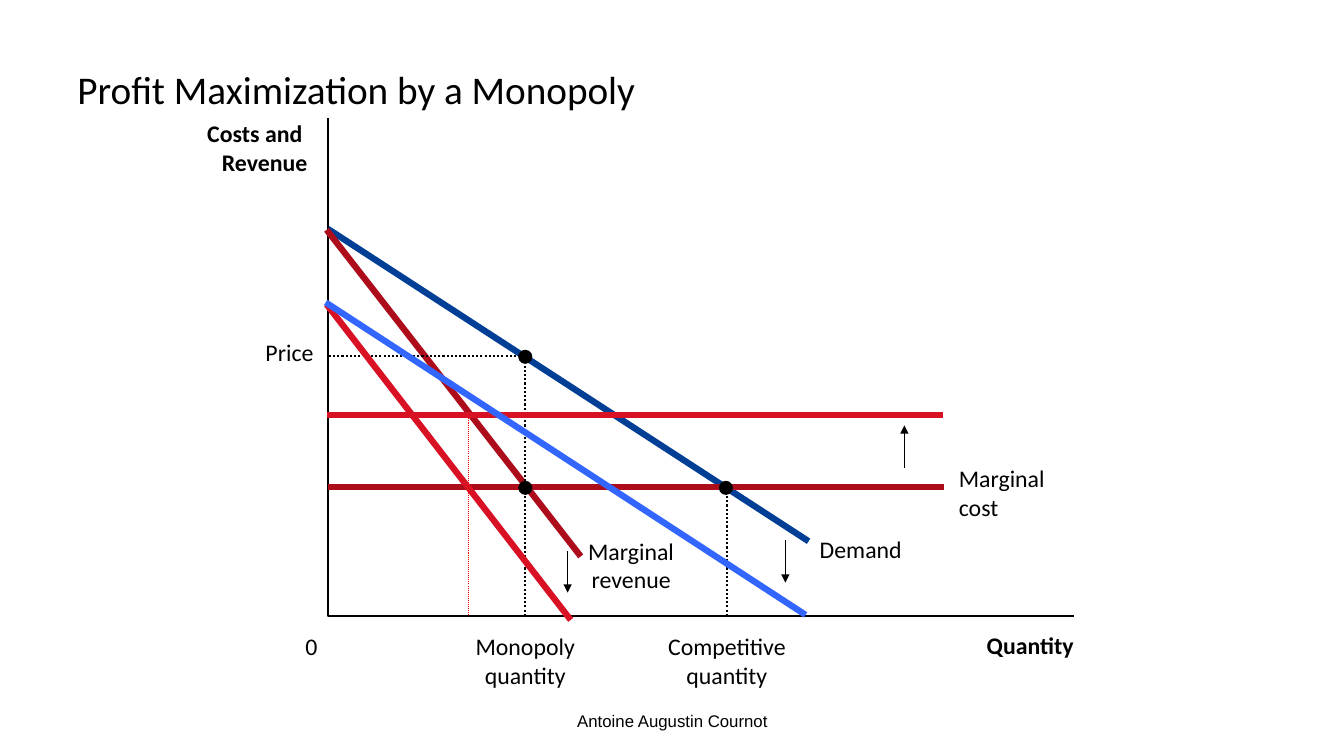
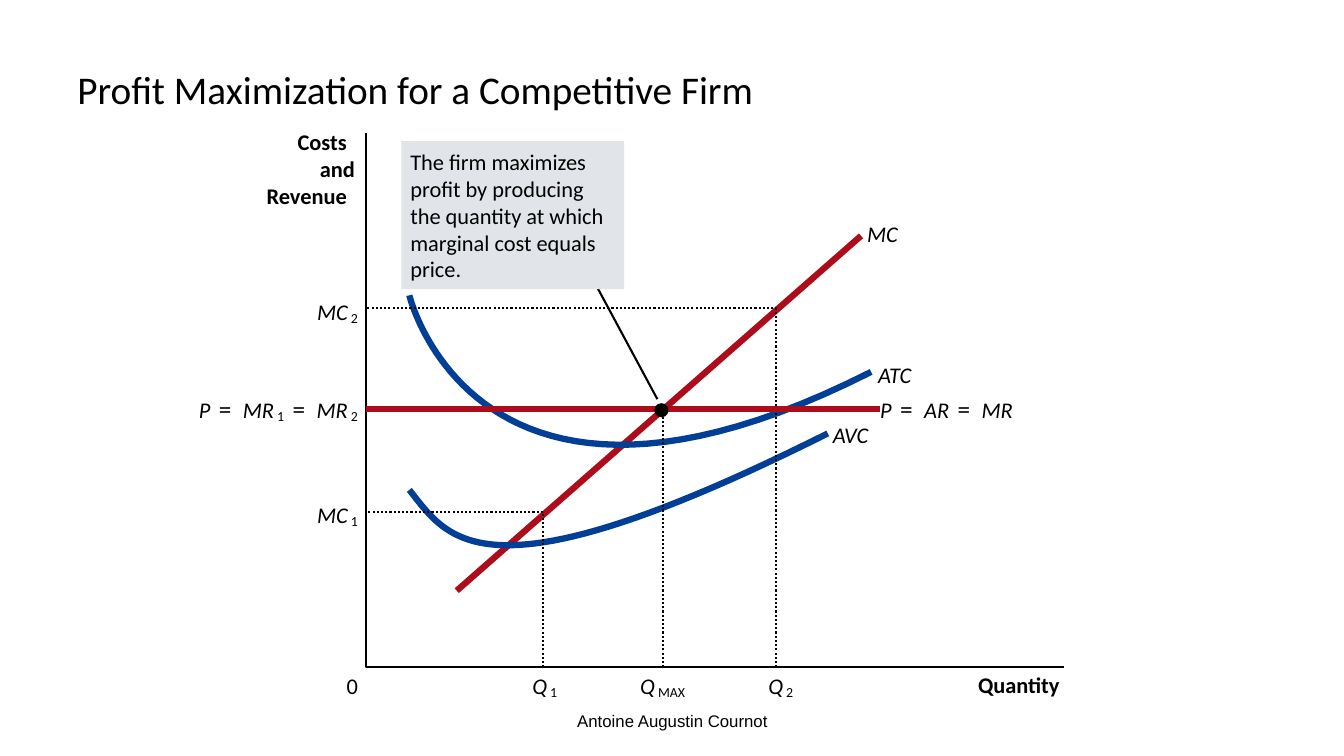
from lxml.etree import SubElement
from pptx import Presentation
from pptx.dml.color import RGBColor
from pptx.enum.dml import MSO_LINE
from pptx.enum.shapes import MSO_CONNECTOR, MSO_SHAPE
from pptx.enum.text import MSO_ANCHOR, PP_ALIGN
from pptx.oxml.ns import qn
from pptx.util import Inches, Pt

COLORS = {
    "ink": "000000",
    "navy": "003F95",
    "blue": "3366FF",
    "wine": "AD0D1B",
    "red": "D91124",
    "thin": "FF0000",
    "note": "E1E5E9",
}
PENS = {
    "axis": ("ink", 1.5, False, False),
    "dots": ("ink", 1.5, True, False),
    "guide": ("thin", 0.75, True, False),
    "arrow": ("ink", 0.75, False, True),
    "navy": ("navy", 4.5, False, False),
    "blue": ("blue", 4.5, False, False),
    "wine": ("wine", 4.5, False, False),
    "red": ("red", 4.5, False, False),
}
ALIGNS = {
    "left": (PP_ALIGN.LEFT, 0),
    "center": (PP_ALIGN.CENTER, 0.5),
    "right": (PP_ALIGN.RIGHT, 1),
}
FONT = "Calibri"
FOOTER = "Antoine Augustin Cournot"
WIDTH = 2


def drop(x, y, zero):
    left, base = zero
    return [(x, base), (x, y), (left, y)]


def curve(a, b, c, d, steps=48):
    points = []
    for step in range(steps + 1):
        t = step / steps
        s = 1 - t
        points.append(tuple(
            s**3 * p + 3 * s * s * t * q + 3 * s * t * t * r + t**3 * e
            for p, q, r, e in zip(a, b, c, d)
        ))
    return points


ZERO1 = (3.25, 6.11)
ZERO2 = (3.63, 6.62)

SLIDES = [
    {
        "title": "Profit Maximization by a Monopoly",
        "size": 17,
        "strokes": [
            ("axis", [(3.25, 1.17), ZERO1, (10.65, 6.11)]),
            ("navy", [(3.25, 2.27), (8.02, 5.37)]),
            ("wine", [(3.24, 2.28), (5.76, 5.52)]),
            ("dots", drop(5.21, 3.53, ZERO1)),
            ("wine", [(3.25, 4.83), (9.36, 4.83)]),
            ("dots", [(7.21, 6.11), (7.21, 4.85)]),
            ("red", [(3.24, 4.12), (9.35, 4.12)]),
            ("red", [(3.24, 3.02), (5.66, 6.15)]),
            ("guide", [(4.65, 4.13), (4.65, 6.11)]),
            ("blue", [(3.23, 3), (7.99, 6.1)]),
            ("arrow", [(7.79, 5.36), (7.79, 5.78)]),
            ("arrow", [(5.63, 5.47), (5.63, 5.88)]),
            ("arrow", [(8.97, 4.64), (8.97, 4.22)]),
        ],
        "spots": [(5.21, 3.54), (5.21, 4.84), (7.2, 4.84)],
        "bold": [
            ("Quantity", 10.65, 6.26, "right"),
            ("Costs and", 3, 1.18, "right"),
            ("Revenue", 3.05, 1.47, "right"),
        ],
        "labels": [
            ("0", 3.15, 6.27, "right"),
            ("Price", 3.11, 3.35, "right"),
            ("Demand", 8.13, 5.3, "left"),
            ("Marginal\nrevenue", 6.26, 5.32, "center"),
            ("Marginal\ncost", 9.51, 4.6, "left"),
            ("Monopoly\nquantity", 5.21, 6.27, "center"),
            ("Competitive\nquantity", 7.21, 6.27, "center"),
        ],
        "terms": [],
    },
    {
        "title": "Profit Maximization for a Competitive Firm",
        "size": 16,
        "strokes": [
            ("axis", [(3.63, 1.32), ZERO2, (10.55, 6.62)]),
            ("wine", [(4.53, 5.86), (8.54, 2.34)]),
            ("navy", curve((4.06, 2.93), (4.06, 2.93), (4.72, 5.68), (8.64, 3.69))),
            ("navy", curve((4.06, 4.86), (4.45, 5.35), (4.78, 6.02), (8.21, 4.3))),
            ("dots", drop(5.39, 5.08, ZERO2)),
            ("dots", drop(7.7, 3.06, ZERO2)),
            ("axis", [(6.52, 3.96), (5.88, 2.77)]),
            ("dots", drop(6.58, 4.06, ZERO2)),
            ("wine", [(3.63, 4.06), (8.73, 4.06)]),
        ],
        "spots": [(6.56, 4.07)],
        "bold": [
            ("Quantity", 10.51, 6.66, "right"),
            ("Costs", 3.44, 1.27, "right"),
            ("and", 3.52, 1.54, "right"),
            ("Revenue", 3.44, 1.81, "right"),
        ],
        "labels": [("0", 3.55, 6.67, "right")],
        "terms": [
            ("MC", 8.6, 2.18, "left"),
            ("ATC", 8.71, 3.58, "left"),
            ("AVC", 8.26, 4.18, "left"),
            ("MC_1", 3.55, 4.96, "right"),
            ("MC_2", 3.55, 2.94, "right"),
            ("Q_1", 5.28, 6.65, "left"),
            ("Q_2", 7.62, 6.65, "left"),
            ("Q_MAX", 6.35, 6.65, "left"),
            ("P = MR_1 = MR_2", 3.55, 3.9, "right"),
            ("P = AR = MR", 8.73, 3.9, "left"),
        ],
        "note": (
            "The firm maximizes profit by producing the quantity "
            "at which marginal cost equals price.",
            (3.98, 1.4, 2.21, 1.47),
        ),
    },
]


def paint(name):
    return RGBColor.from_string(COLORS[name])


def style(run, size, face=FONT, bold=False, italic=False):
    font = run.font
    font.name, font.size = face, Pt(size)
    font.bold, font.italic = bold, italic
    font.color.rgb = paint("ink")


def write(frame, text, size, align=PP_ALIGN.LEFT, **kind):
    frame.text = text
    for line in frame.paragraphs:
        line.alignment = align
        for run in line.runs:
            style(run, size, **kind)


def box(slide, *area):
    frame = slide.shapes.add_textbox(*map(Inches, area)).text_frame
    frame.word_wrap = True
    return frame


def inset(frame, side=0, top=0):
    frame.margin_left = frame.margin_right = Inches(side)
    frame.margin_top = frame.margin_bottom = Inches(top)


def place(slide, x, y, align, rows=1):
    side, share = ALIGNS[align]
    frame = box(slide, x - WIDTH * share, y, WIDTH, 0.29 * rows)
    inset(frame)
    return frame, side


def label(slide, item, size, bold=False):
    text, x, y, align = item
    frame, side = place(slide, x, y, align, text.count("\n") + 1)
    write(frame, text, size, side, bold=bold)


def term(slide, item, size):
    text, x, y, align = item
    frame, side = place(slide, x, y, align)
    line = frame.paragraphs[0]
    line.alignment = side

    def add(part, points, italic=False, **props):
        run = line.add_run()
        run.text = part
        style(run, points, italic=italic)
        for key, value in props.items():
            run.font._element.set(key, value)

    for word in text.split():
        if word == "=":
            add(" = ", size + 2, spc="200")
            continue
        base, _, low = word.partition("_")
        add(base, size, italic=True)
        if low:
            add(" " + low, size + 1, baseline="-13000")


def stroke(slide, pen, points):
    color, width, dotted, arrow = PENS[pen]
    spots = [(Inches(x), Inches(y)) for x, y in points]
    if len(spots) == 2:
        shape = slide.shapes.add_connector(MSO_CONNECTOR.STRAIGHT, *spots[0], *spots[1])
    else:
        path = slide.shapes.build_freeform(*spots[0], scale=1.0)
        path.add_line_segments(spots[1:], close=False)
        shape = path.convert_to_shape()
        shape.fill.background()
        shape.shadow.inherit = False
    line = shape.line
    line.color.rgb, line.width = paint(color), Pt(width)
    if dotted:
        line.dash_style = MSO_LINE.ROUND_DOT
    if arrow:
        SubElement(line._get_or_add_ln(), qn("a:tailEnd"), type="triangle")
    if len(spots) == 2:
        SubElement(shape._element.spPr, qn("a:effectLst"))


def solid(slide, kind, color, area):
    shape = slide.shapes.add_shape(kind, *map(Inches, area))
    shape.fill.solid()
    shape.fill.fore_color.rgb = paint(color)
    shape.line.fill.background()
    shape.shadow.inherit = False
    return shape


def frame_up(slide, title):
    head = box(slide, 0.67, 0.3, 12, 1.25)
    write(head, title, 28)
    head.paragraphs[0].line_spacing = 0.8
    foot = box(slide, 4.56, 6.95, 4.22, 0.4)
    write(foot, FOOTER, 12, PP_ALIGN.CENTER, face="Arial")
    head.vertical_anchor = foot.vertical_anchor = MSO_ANCHOR.MIDDLE


def build(deck, data):
    slide = deck.slides.add_slide(deck.slide_layouts[6])
    size = data["size"]
    frame_up(slide, data["title"])
    for pen, points in data["strokes"]:
        stroke(slide, pen, points)
    for x, y in data["spots"]:
        solid(slide, MSO_SHAPE.OVAL, "ink", (x - 0.07, y - 0.07, 0.14, 0.14))
    if "note" in data:
        text, area = data["note"]
        frame = solid(slide, MSO_SHAPE.RECTANGLE, "note", area).text_frame
        frame.word_wrap = True
        frame.vertical_anchor = MSO_ANCHOR.TOP
        inset(frame, 0.09, 0.07)
        write(frame, text, size)
    for item in data["bold"]:
        label(slide, item, size, True)
    for item in data["labels"]:
        label(slide, item, size)
    for item in data["terms"]:
        term(slide, item, size)


def main():
    deck = Presentation()
    deck.slide_width, deck.slide_height = Inches(13.33), Inches(7.5)
    for data in SLIDES:
        build(deck, data)
    deck.save("out.pptx")


if __name__ == "__main__":
    main()
